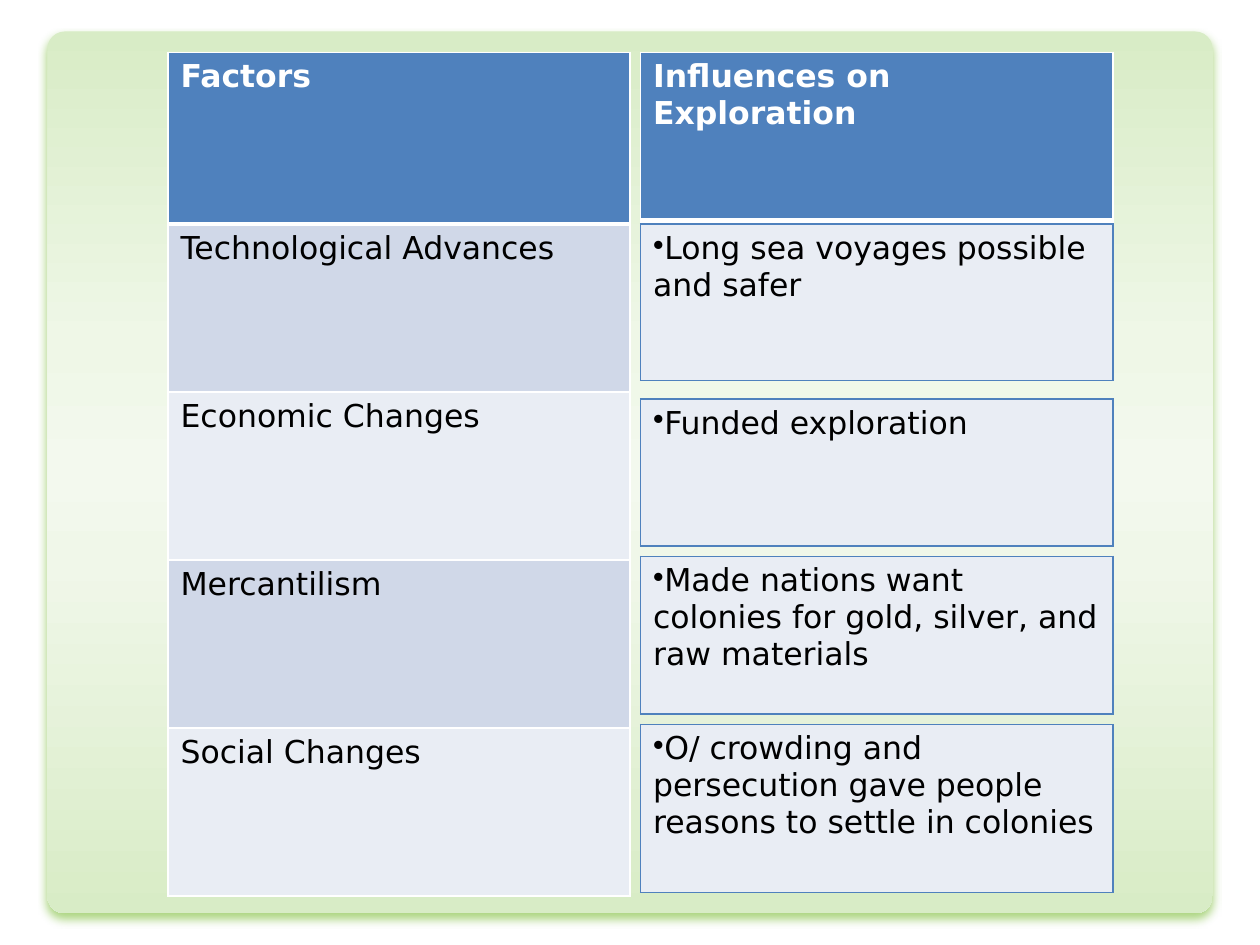
"""Build a slide of factors and their influences on exploration."""
import pptx
import pptx.util
import pptx.oxml
import pptx.oxml.ns
import pptx.dml.color
import pptx.enum.shapes

Pt = pptx.util.Pt
RGB = pptx.dml.color.RGBColor
WHITE = RGB(0xFF, 0xFF, 0xFF)
BLACK = RGB(0, 0, 0)
BLUE = RGB(0x4F, 0x81, 0xBD)
MIST = RGB(0xD0, 0xD8, 0xE8)
PALE = RGB(0xE9, 0xED, 0xF4)
GREEN = RGB(0x58, 0xAB, 0x00)
STOPS = [
    (0, RGB(0xD8, 0xEC, 0xC6)),
    (35, RGB(0xEF, 0xF7, 0xE7)),
    (50, RGB(0xF3, 0xF9, 0xEE)),
    (60, RGB(0xF0, 0xF7, 0xE9)),
    (100, RGB(0xD8, 0xEC, 0xC6)),
]
FONT = "DejaVu Sans"
NS = pptx.oxml.ns.nsdecls("a")


def add_grid(left, top, width, heights):
    frame = slide.shapes.add_table(
        len(heights), 1, Pt(left), Pt(top), Pt(width), Pt(sum(heights)))
    grid = frame.table
    grid.first_row = grid.horz_banding = False
    for row, height in zip(grid.rows, heights):
        row.height = Pt(height)
    return grid


def style_cell(cell, text, fill, edge, head=False, over=1):
    props = cell._tc.get_or_add_tcPr()
    for side, width in (("L", 1), ("R", 1), ("T", over), ("B", 3 if head else 1)):
        props.append(pptx.oxml.parse_xml(
            f'<a:ln{side} {NS} w="{Pt(width)}"><a:solidFill>'
            f'<a:srgbClr val="{edge}"/></a:solidFill></a:ln{side}>'))
    cell.fill.solid()
    cell.fill.fore_color.rgb = fill
    cell.text_frame.text = text
    font = cell.text_frame.paragraphs[0].runs[0].font
    font.name, font.size, font.bold = FONT, Pt(18), head
    font.color.rgb = WHITE if head else BLACK


deck = pptx.Presentation()
deck.slide_width, deck.slide_height = Pt(720), Pt(540)
slide = deck.slides.add_slide(deck.slide_layouts[6])

panel = slide.shapes.add_shape(
    pptx.enum.shapes.MSO_SHAPE.ROUNDED_RECTANGLE, Pt(27), Pt(18), Pt(666), Pt(504))
panel.adjustments[0] = 0.02
panel.line.fill.background()
panel.fill.gradient()
panel.fill.gradient_angle = 270
stops = panel._element.spPr.find(".//" + pptx.oxml.ns.qn("a:gsLst"))
stops.clear()
for place, color in STOPS:
    stops.append(pptx.oxml.parse_xml(
        f'<a:gs {NS} pos="{place * 1000}"><a:srgbClr val="{color}"/></a:gs>'))
panel._element.spPr.append(pptx.oxml.parse_xml(
    f'<a:effectLst {NS}><a:outerShdw blurRad="{Pt(5)}" dist="{Pt(3.6)}" '
    f'dir="5400000" rotWithShape="0"><a:srgbClr val="{GREEN}">'
    '<a:alpha val="50000"/></a:srgbClr></a:outerShdw></a:effectLst>'))

factors = ["Factors", "Technological Advances", "Economic Changes",
           "Mercantilism", "Social Changes"]
grid = add_grid(96, 30, 264, [98] + [96] * 4)
for row, text in enumerate(factors):
    fill = BLUE if row == 0 else (PALE, MIST)[row % 2]
    style_cell(grid.cell(row, 0), text, fill, WHITE, row == 0, 3 if row == 1 else 1)

grid = add_grid(366, 30, 270, [96])
style_cell(grid.cell(0, 0), "Influences on Exploration", BLUE, WHITE, True)

effects = [
    (128, 89.5, "Long sea voyages possible and safer"),
    (228, 84, "Funded exploration"),
    (318, 90, "Made nations want colonies for gold, silver, and raw materials"),
    (414, 96, "O/ crowding and persecution gave people reasons to settle in colonies"),
]
for top, height, text in effects:
    cell = add_grid(366, top, 270, [height]).cell(0, 0)
    style_cell(cell, text, PALE, BLUE)
    props = cell.text_frame.paragraphs[0]._p.get_or_add_pPr()
    props.append(pptx.oxml.parse_xml(f'<a:buChar {NS} char="•"/>'))

deck.save("out.pptx")
